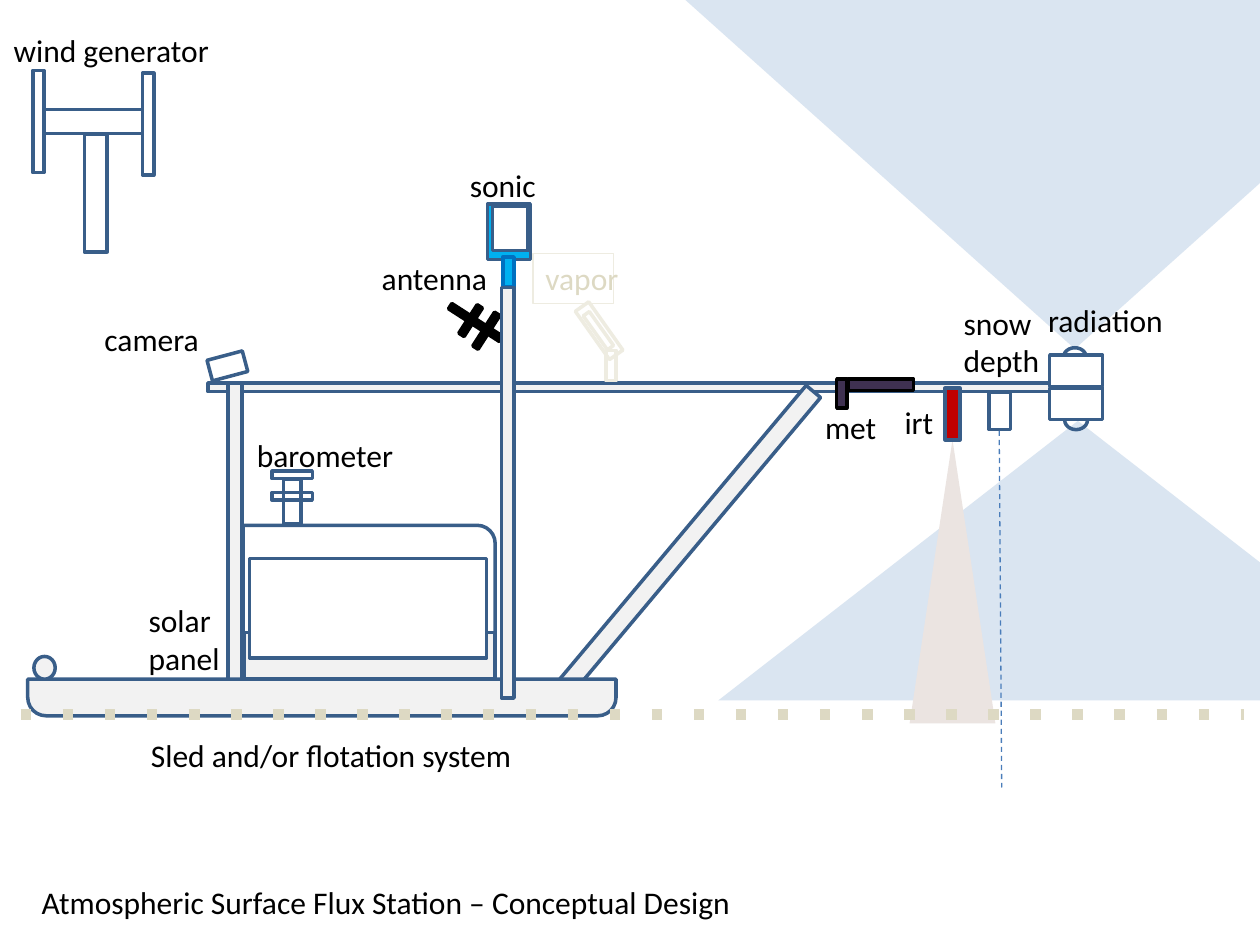
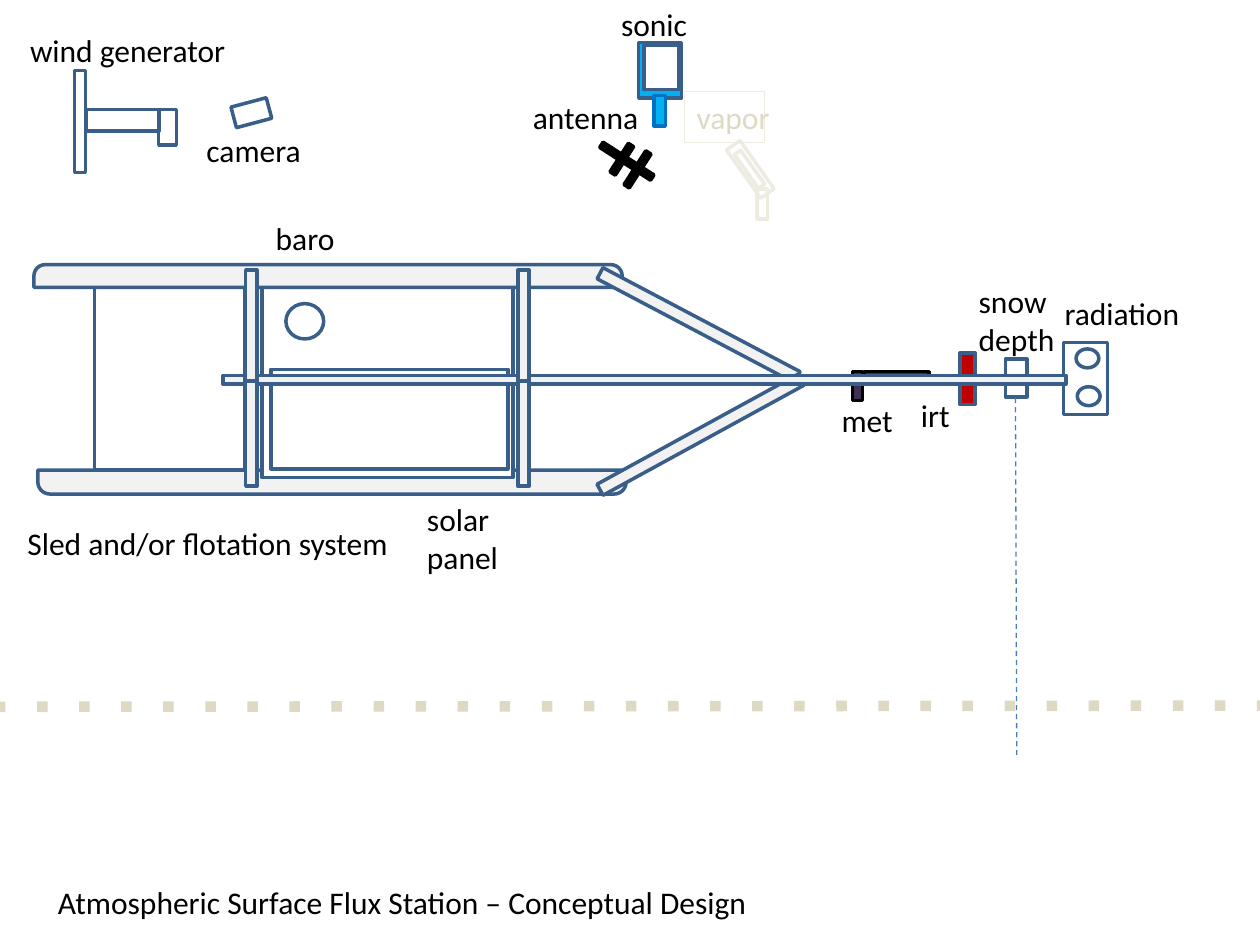
import pptx
import pptx.util
import pptx.dml.color
import pptx.enum.dml
import pptx.enum.shapes
import pptx.enum.text
import pptx.oxml

Pt = pptx.util.Pt
RGB = pptx.dml.color.RGBColor.from_string
PRESET = pptx.enum.shapes.MSO_SHAPE

THEME = {
    "font": {"name": "Calibri", "size": Pt(18), "bold": False},
    "frame": {
        "margin_left": Pt(7.2), "margin_right": Pt(7.2),
        "margin_top": Pt(3.6), "margin_bottom": Pt(3.6),
        "vertical_anchor": pptx.enum.text.MSO_ANCHOR.TOP,
        "auto_size": pptx.enum.text.MSO_AUTO_SIZE.NONE,
    },
    "text": "000000",
    "faint_text": "DDD9C3",
    "faint_line": "EEECE1",
    "outline_width": 2,
    "looks": {
        "outline": (None, "395E89"),
        "metal": ("F2F2F2", "395E89"),
        "panel": ("FFFFFF", "395E89"),
        "vapor": (None, "EEECE1"),
        "antenna": ("000000", "000000"),
        "sonic": ("00B0F0", "395E89"),
        "stem": ("00B0F0", "0070C0"),
        "met": ("3F3151", "000000"),
        "irt": ("C00000", "395E89"),
        "view": ("DAE5F1", None),
        "cone": ("EBE4E1", None),
    },
    "lines": {"pulse": ("4A7DBA", 0.75, "dash"), "surface": ("DDD9C3", 6, "dot")},
}
BOX, DISC, CONE = PRESET.RECTANGLE, PRESET.OVAL, PRESET.ISOSCELES_TRIANGLE
HULL, HOOD = PRESET.ROUND_2_SAME_RECTANGLE, PRESET.ROUND_1_RECTANGLE
LABEL_HEIGHT, TWO_LINES = 28.8, 51.1


def draw(slide, parts, dx=0, dy=0):
    for look, left, top, width, height, *extra in parts:
        turn, preset = extra + [0, BOX][len(extra):]
        part = slide.shapes.add_shape(preset, Pt(left + dx), Pt(top + dy), Pt(width), Pt(height))
        part.shadow.inherit = False
        part.rotation = turn
        if preset == HULL:
            part.adjustments[0], part.adjustments[1] = 0.5, 0
        fill, line = THEME["looks"][look]
        for paint, colour in ((part.fill, fill), (part.line.fill, line)):
            if colour:
                paint.solid()
                paint.fore_color.rgb = RGB(colour)
            else:
                paint.background()
        if line:
            part.line.width = Pt(THEME["outline_width"])


def write(box, text, colour, wrap):
    frame = box.text_frame
    frame.text = text
    for name, value in THEME["frame"].items():
        setattr(frame, name, value)
    frame.word_wrap = wrap
    line = frame.paragraphs[0]
    line.alignment = pptx.enum.text.PP_ALIGN.LEFT
    for name, value in THEME["font"].items():
        setattr(line.font, name, value)
    line.font.color.rgb = RGB(colour)


mast = [
    ("vapor", 337.7, 172.1, 9.4, 33.8, 324.7),
    ("vapor", 346.3, 200.2, 5.8, 17.3),
    ("vapor", 339.8, 177.1, 4.3, 23.8, 324.5),
    ("antenna", 270, 167, 3.6, 34.6, 302.8),
    ("antenna", 259.2, 181.4, 19.4, 3.6, 122.8),
    ("antenna", 266.4, 187.2, 23, 3.6, 302.8),
    ("sonic", 278.6, 116.6, 24.5, 31.7),
    ("panel", 281.5, 118.1, 20.2, 25.2),
    ("stem", 287.3, 146.9, 6.5, 17.3),
]
mast_labels = [
    ("sonic", 261.4, 91.4, 52.6),
    ("antenna", 211, 144.7, 75.6),
    ("vapor", 304.6, 144.7, 46.1),
]
met_sensor = [
    ("met", 484.6, 216.7, 37.4, 6.5),
    ("met", 478.1, 216.7, 5.8, 16.6),
]
boom_labels = [
    ("radiation", 591.8, 168.5, 80.6),
    ("met", 464.4, 229.7, 43.9),
    ("irt", 509.8, 226.8, 31),
]

side_body = [
    ("view", 410.4, 240.5, 411.1, 159.8, 0, CONE),
    ("view", 391.7, 0, 445, 199.4, 180, CONE),
    ("outline", 139, 300.2, 144, 61.9, 0, HOOD),
    ("metal", 118.8, 218.9, 481.7, 5),
    ("metal", 130.3, 218.9, 7.9, 182.9),
    ("metal", 284.4, 302.4, 219.6, 10.8, 130),
    ("outline", 565.2, 223.9, 12.2, 21.6),
    ("outline", 18.7, 40.3, 6.5, 58.3),
    ("outline", 25.2, 62.6, 56.2, 13.7),
    ("outline", 48.2, 77, 13, 67),
    ("outline", 81.4, 41.8, 6.5, 58.3),
    ("metal", 15.8, 388.1, 336.2, 20.9, 180, HULL),
    ("metal", 19.4, 375.1, 12.2, 13, 0, DISC),
    ("metal", 139.7, 361.4, 143.3, 26.6),
    ("outline", 162, 273.6, 10.1, 25.9),
    ("outline", 155.5, 269.3, 23, 4.3),
    ("outline", 155.5, 281.5, 23, 4.3),
    ("outline", 608.4, 234.7, 13, 10.8, 0, DISC),
    ("outline", 607.7, 198.7, 13, 10.8, 0, DISC),
    ("panel", 599.8, 221.8, 30.2, 18),
    ("panel", 599.8, 203, 30.2, 18),
    ("outline", 119.5, 203, 20.9, 12.2, 345.1),
    ("cone", 519.8, 251.3, 49, 162, 0, CONE),
    ("irt", 540, 221.8, 8.6, 29.5),
]
side_front = [
    ("panel", 142.6, 319, 135.4, 56.9),
    ("metal", 286.6, 164.2, 7.2, 234.7),
]

top_body = [
    ("panel", 607.7, 195.8, 25.2, 41),
    ("outline", 574.6, 205.2, 12.2, 21.6),
    ("outline", 42.5, 40.3, 6.5, 58.3),
    ("outline", 49, 62.6, 41.8, 12.2),
    ("outline", 90.7, 62.6, 10.1, 20.2),
    ("metal", 21.6, 268.6, 336.2, 13.7, 180, HULL),
    ("panel", 149.8, 157, 143.3, 115.9),
    ("outline", 615.6, 221, 13, 10.8, 0, DISC),
    ("outline", 614.9, 199.4, 13, 10.8, 0, DISC),
    ("outline", 133.2, 58.3, 20.9, 12.2, 345.1),
    ("irt", 548.6, 201.6, 8.6, 29.5),
    ("panel", 154.8, 211, 135.4, 56.9),
]
top_front = [
    ("metal", 19.4, 151.2, 336.2, 13, 0, HULL),
    ("metal", 335.5, 182.2, 127.4, 7.2, 207.8),
    ("metal", 334.8, 244.8, 131, 7.2, 151.3),
    ("outline", 163.4, 173.5, 21.6, 20.2, 0, DISC),
    ("metal", 127.4, 214.6, 481.7, 5),
    *[("metal", left, top, 6.5, height)
      for left in (295.9, 140.4) for top, height in ((216, 61.9), (154.4, 63.4))],
    ("outline", 54, 164.2, 85.7, 104.4),
]

views = [
    {
        "layers": [(side_body, 0, 0), (mast, 0, 0), (side_front, 0, 0), (met_sensor, 0, 0)],
        "labels": [(mast_labels, 0, 0), (boom_labels, 0, 0), ([
            ("snow depth", 543.6, 169.9, 62.6),
            ("barometer", 139.7, 245.5, 92.9),
            ("wind generator", 0.7, 14.4, 127.4),
            ("solar panel", 77.8, 339.8, 64.1),
            ("Sled and/or flotation system", 79.2, 416.9, 235.4),
            ("camera", 52.6, 179.3, 69.1),
        ], 0, 0)],
        "lines": [("pulse", 571, 246.2, 572.4, 450), ("surface", -12.2, 408.2, 710.6, 408.2)],
        "title_left": 16.6,
    },
    {
        "layers": [(top_body, 0, 0), (mast, 86.4, -92.2), (met_sensor, 9, -4.3), (top_front, 0, 0)],
        "labels": [(mast_labels, 86.4, -92.2), (boom_labels, 9.4, -4.3), ([
            ("snow depth", 552.2, 157.7, 62.6),
            ("baro", 150.5, 121.7, 48.2),
            ("wind generator", 10.1, 14.4, 127.4),
            ("solar panel", 236.9, 282.2, 64.1),
            ("Sled and/or flotation system", 8.6, 295.9, 227.5),
            ("camera", 110.9, 71.3, 69.1),
        ], 0, 0)],
        "lines": [("pulse", 580.3, 227.5, 581, 431.3), ("surface", -2.9, 403.9, 720, 403.2)],
        "title_left": 25.9,
    },
]

deck = pptx.Presentation()
deck.slide_width, deck.slide_height = Pt(720), Pt(540)

for view in views:
    slide = deck.slides.add_slide(deck.slide_layouts[5])
    title = slide.shapes.title
    place = {"left": view["title_left"], "top": 501.1, "width": 449.3, "height": LABEL_HEIGHT}
    for name, value in place.items():
        setattr(title, name, Pt(value))
    write(title, "Atmospheric Surface Flux Station – Conceptual Design", THEME["text"], True)

    for parts, dx, dy in view["layers"]:
        draw(slide, parts, dx, dy)

    for labels, dx, dy in view["labels"]:
        for text, left, top, width in labels:
            wrapped = text in ("snow depth", "solar panel")
            height = TWO_LINES if wrapped else LABEL_HEIGHT
            label = slide.shapes.add_textbox(Pt(left + dx), Pt(top + dy), Pt(width), Pt(height))
            faint = text == "vapor"
            write(label, text, THEME["faint_text" if faint else "text"], wrapped)
            if faint:
                label.line.color.rgb = RGB(THEME["faint_line"])
                label.line.width = Pt(0.75)

    for role, x1, y1, x2, y2 in view["lines"]:
        colour, weight, dash = THEME["lines"][role]
        trace = slide.shapes.add_connector(
            pptx.enum.shapes.MSO_CONNECTOR.STRAIGHT, Pt(x1), Pt(y1), Pt(x2), Pt(y2))
        trace.line.color.rgb = RGB(colour)
        trace.line.width = Pt(weight)
        trace.line.dash_style = pptx.enum.dml.MSO_LINE.DASH
        properties = trace._element.spPr
        properties.xpath(".//a:prstDash")[0].set("val", dash)
        properties.append(pptx.oxml.parse_xml(
            '<a:effectLst xmlns:a="http://schemas.openxmlformats.org/drawingml/2006/main"/>'))

deck.save("out.pptx")
